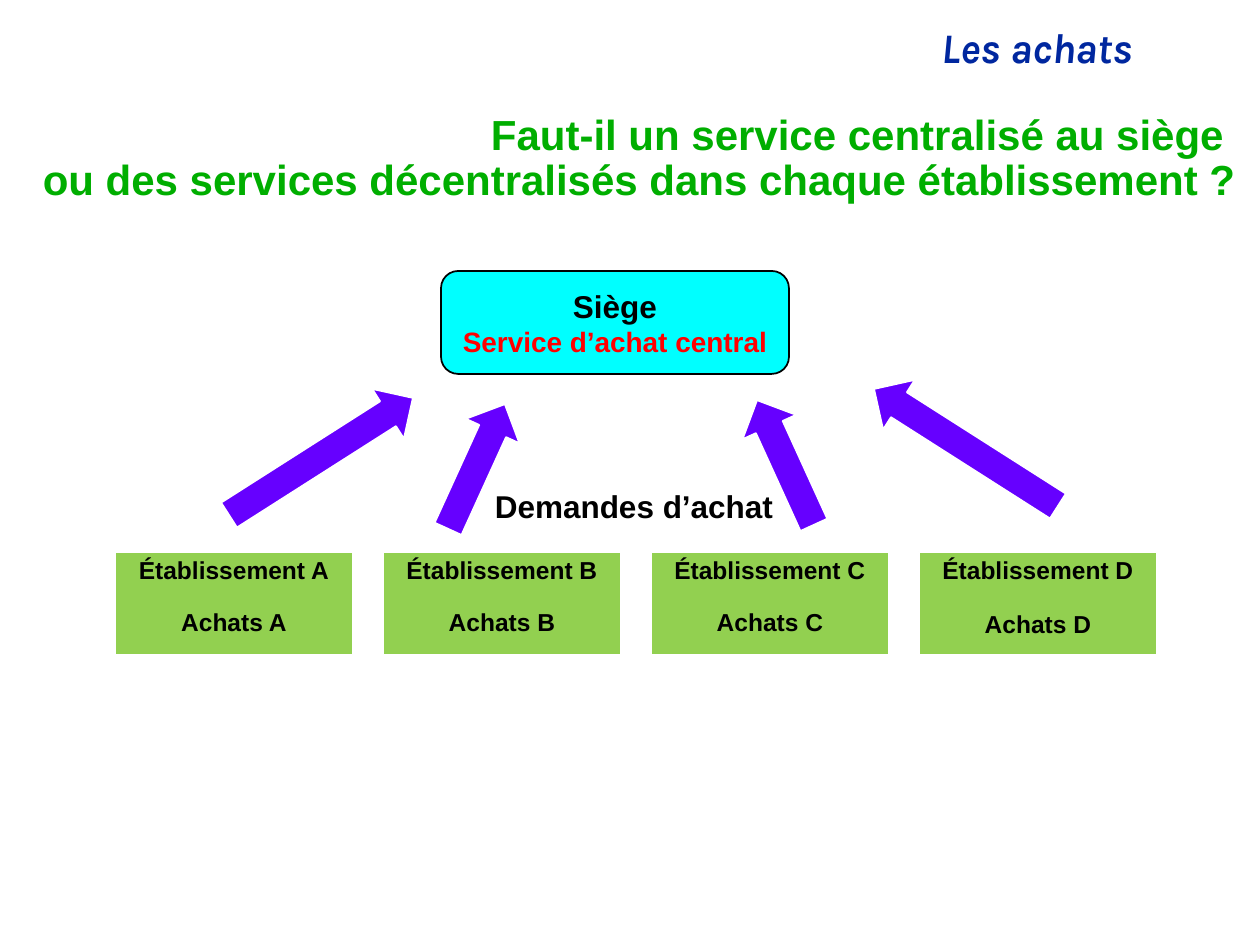
from pptx import Presentation
from pptx.dml.color import RGBColor
from pptx.enum.shapes import MSO_SHAPE
from pptx.enum.text import MSO_ANCHOR, PP_ALIGN
from pptx.util import Pt

PX = 914400 / 126
RECT, ROUNDED, ARROW = MSO_SHAPE.RECTANGLE, MSO_SHAPE.ROUNDED_RECTANGLE, MSO_SHAPE.RIGHT_ARROW
CENTER, RIGHT = PP_ALIGN.CENTER, PP_ALIGN.RIGHT
TOP, MIDDLE = MSO_ANCHOR.TOP, MSO_ANCHOR.MIDDLE
BLACK, WHITE, RED = "000000", "FFFFFF", "FF0000"
NAVY, GREEN, LIME, CYAN, VIOLET = "00279F", "00AE00", "92D050", "00FFFF", "6600FF"


def color(value):
    return RGBColor.from_string(value)


def emu(*lengths):
    return [round(length * PX) for length in lengths]


class PurchasingSlide:
    """Holds the text style and the current slide, and adds its elements."""

    def __init__(self, slide, font="Arial"):
        self.slide = slide
        self.font = font

    def set_lines(self, frame, lines, align, spacing, font=None, italic=False, gap=0):
        frame.text = "\n".join(text for text, _, _ in lines)
        for index, (paragraph, (_, size, ink)) in enumerate(zip(frame.paragraphs, lines)):
            paragraph.alignment = align
            paragraph.line_spacing = spacing
            if index:
                paragraph.space_before = Pt(gap)
            for run in paragraph.runs:
                run.font.name = font or self.font
                run.font.size = Pt(size)
                run.font.bold = True
                run.font.italic = italic
                run.font.color.rgb = color(ink)

    def text(self, box, lines, align, wrap=False, **style):
        frame = self.slide.shapes.add_textbox(*emu(*box)).text_frame
        frame.word_wrap = wrap
        self.set_lines(frame, lines, align, 0.9, **style)

    def shape(self, kind, box, fill, line):
        shape = self.slide.shapes.add_shape(kind, *emu(*box))
        shape.shadow.inherit = False
        shape.fill.solid()
        shape.fill.fore_color.rgb = color(fill)
        shape.line.color.rgb = color(line)
        shape.line.width = Pt(1)
        return shape

    def block(self, kind, box, fill, line, lines, anchor, spacing=1.0, gap=0):
        frame = self.shape(kind, box, fill, line).text_frame
        frame.word_wrap = True
        frame.vertical_anchor = anchor
        self.set_lines(frame, lines, CENTER, spacing, gap=gap)

    def arrow(self, left, top, width, angle):
        self.shape(ARROW, (left, top, width, 59), VIOLET, WHITE).rotation = angle


def main():
    deck = Presentation()
    deck.slide_width, deck.slide_height = emu(1260, 945)
    page = PurchasingSlide(deck.slides.add_slide(deck.slide_layouts[6]))

    page.text((168, 21, 977, 58), [("Les achats", 24, NAVY)], RIGHT,
              wrap=True, font="Karla", italic=True)
    question = [
        "Faut-il un service centralisé au siège ",
        "ou des services décentralisés dans chaque établissement ?",
    ]
    page.text((18, 108, 1230, 105), [(line, 24, GREEN) for line in question], RIGHT)

    head_office = [("Siège", 18, BLACK), ("Service d’achat central", 16, RED)]
    page.block(ROUNDED, (441, 271, 348, 103), CYAN, BLACK, head_office, MIDDLE)

    for index, (site, gap) in enumerate(zip("ABCD", (14.5, 14.5, 14.5, 16))):
        lines = [(f"{label} {site}", 14, BLACK) for label in ("Établissement", "Achats")]
        page.block(RECT, (115 + 268 * index, 552, 238, 103), LIME, WHITE, lines, TOP, 0.9, gap)

    for request in (
        (212, 427, 218, 327.5),
        (857, 418, 218, 212.5),
        (408, 437, 137, 294.5),
        (717, 433, 137, 245.5),
    ):
        page.arrow(*request)
    page.text((481, 485, 306, 47), [("Demandes d’achat", 18, BLACK)], CENTER)

    deck.save("out.pptx")


if __name__ == "__main__":
    main()
